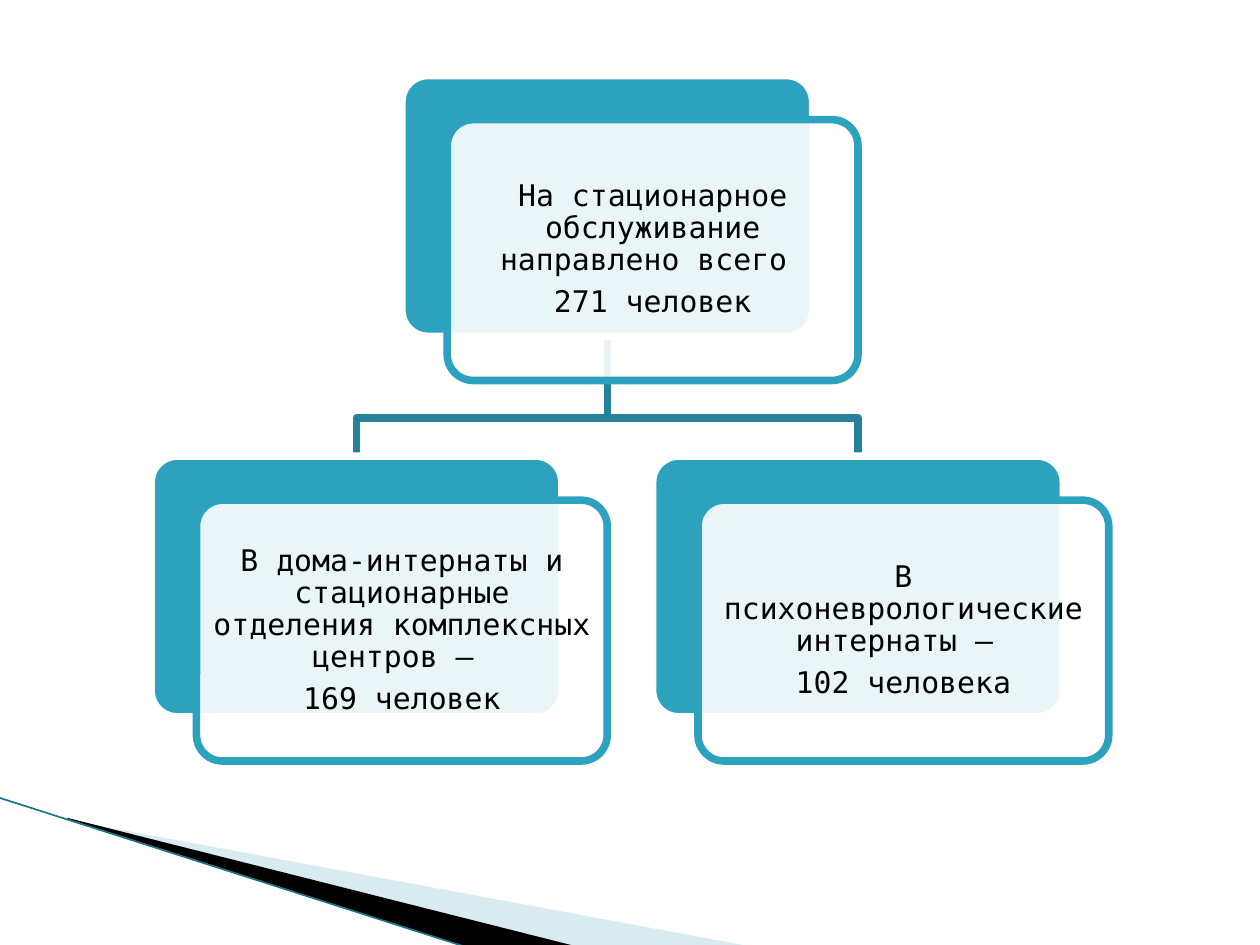
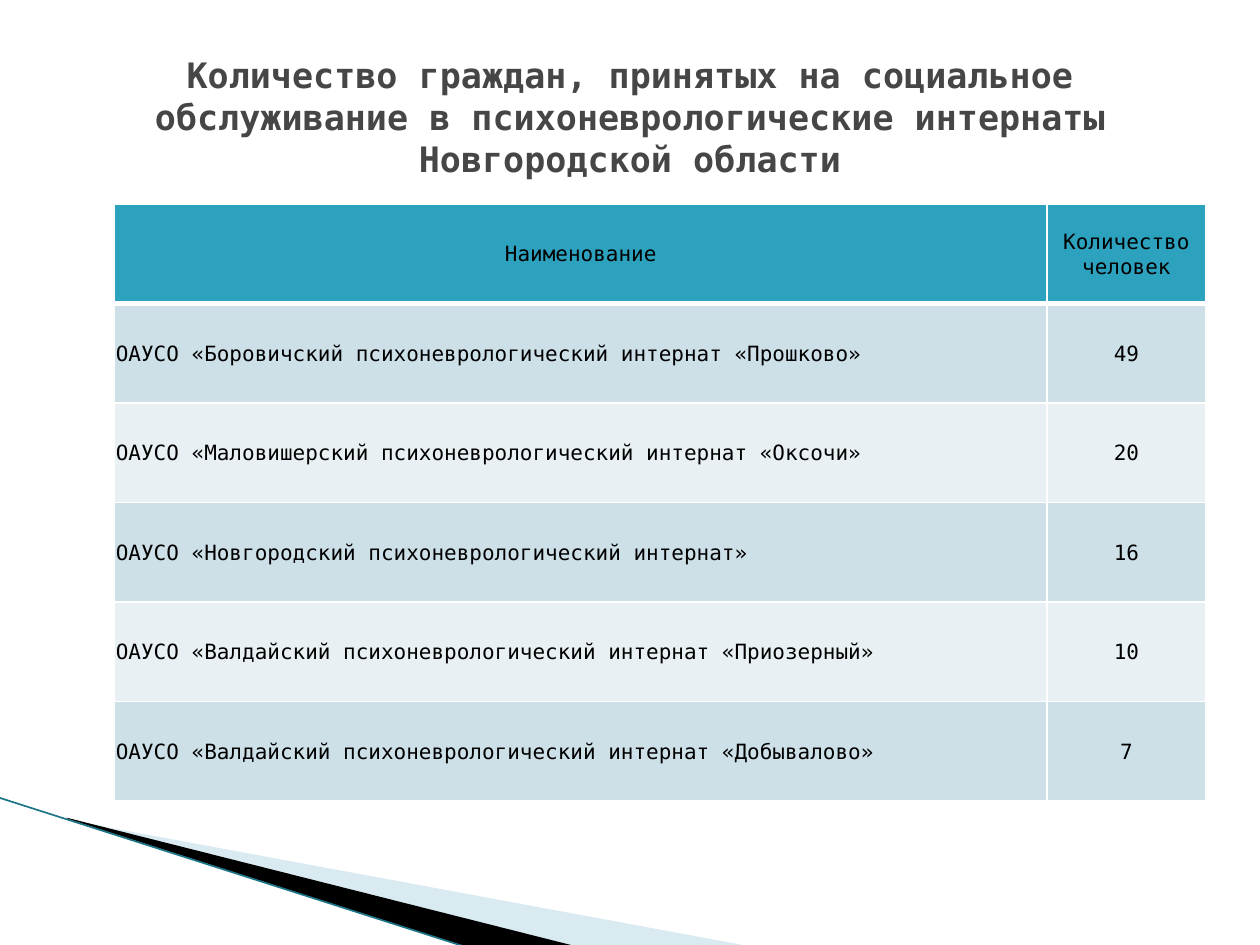
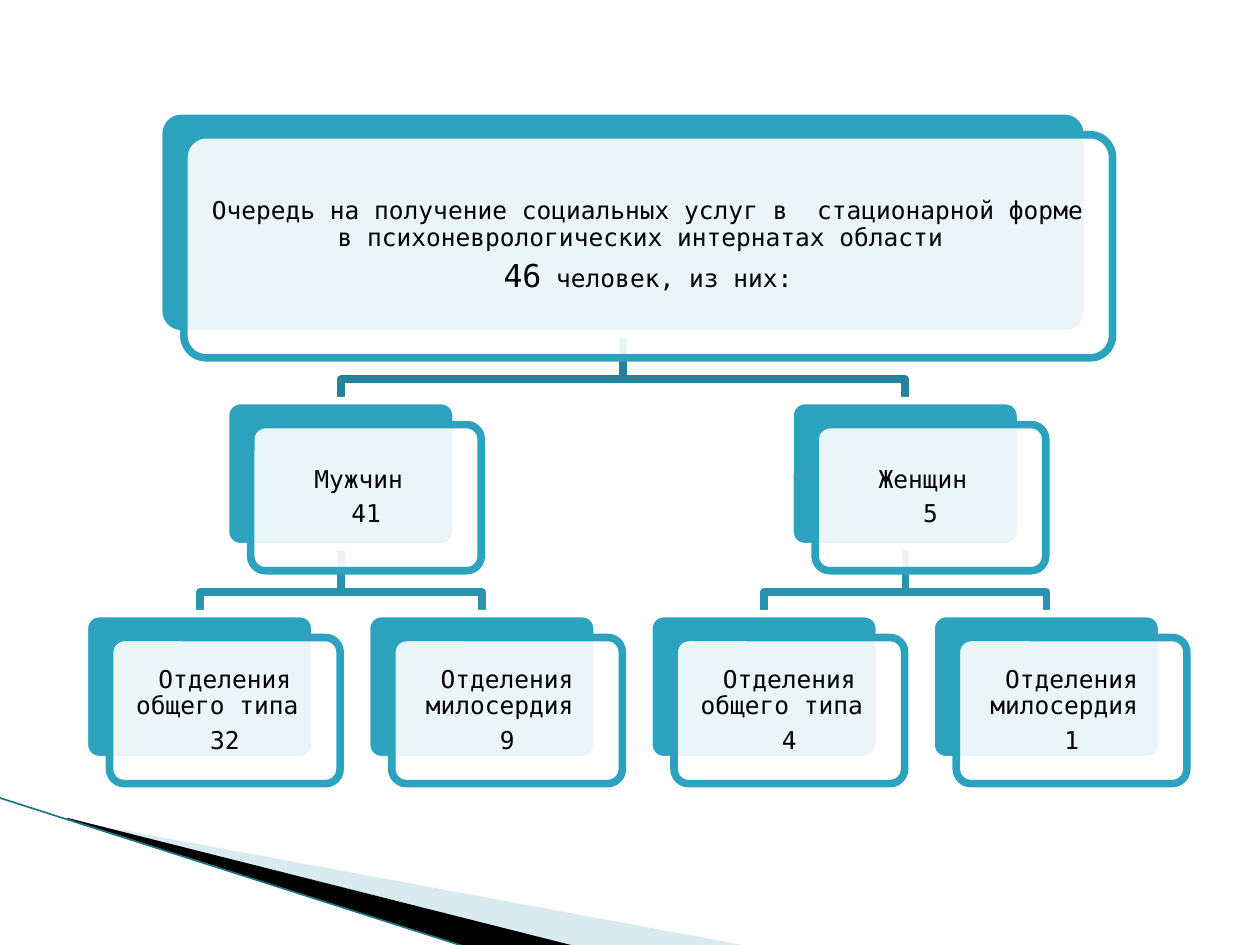
from lxml import etree
from pptx import Presentation
from pptx.dml.color import RGBColor
from pptx.enum.shapes import MSO_CONNECTOR, MSO_SHAPE
from pptx.enum.text import MSO_ANCHOR, PP_ALIGN
from pptx.oxml.ns import qn
from pptx.util import Inches, Pt

FONT = "DejaVu Sans Mono"
TEAL, WHITE, BLACK, GREY = "2DA2BF", "FFFFFF", "000000", "464646"
EDGE, PALE = "1B7587", "A0CBDC"
LINKS = ["248299", "2993AD"]  # one colour per tree level
BANDS = ["CDE0E8", "E8F0F4"]
LINE_W = 4.33

# A node is (lines of text, children); a line is a string or a list of (text, size).
SENT_TREE = (["На стационарное обслуживание направлено всего ", "271 человек"], [
    (["В дома-интернаты и стационарные отделения комплексных центров – ",
      "169 человек"], []),
    (["В психоневрологические интернаты – ", "102 человека"], []),
])
SENT_LAYOUT = dict(sizes=[(3.26, 2.07), (3.26, 2.07)], left=1.2, top=0.6, pitch=3.98,
                   gap=0.95, shift=(0.36, 0.35), font_size=17, margin=0.07)

GENERAL, MERCY = "Отделения общего типа ", "Отделения милосердия "
QUEUE_TREE = (["Очередь на получение социальных услуг в  стационарной форме "
               "в психоневрологических интернатах области ",
               [("46", 18), (" человек, из них:", 14)]], [
    (["Мужчин ", "41"], [([GENERAL, "32"], []), ([MERCY, "9"], [])]),
    (["Женщин ", "5"], [([GENERAL, "4"], []), ([MERCY, "1"], [])]),
])
QUEUE_LAYOUT = dict(sizes=[(7.37, 1.77), (1.83, 1.16), (1.83, 1.16)], left=0.67, top=0.88,
                    pitch=2.24, gap=0.53, shift=(0.2, 0.19), font_size=14, margin=0.06)

TABLE_TITLE = ("Количество граждан, принятых на социальное обслуживание "
               "в психоневрологические интернаты Новгородской области")
TABLE_ROWS = [
    ("Наименование", "Количество человек"),
    ("ОАУСО «Боровичский психоневрологический интернат «Прошково»", "49"),
    ("ОАУСО «Маловишерский психоневрологический интернат «Оксочи»", "20"),
    ("ОАУСО «Новгородский психоневрологический интернат»", "16"),
    ("ОАУСО «Валдайский психоневрологический интернат «Приозерный»", "10"),
    ("ОАУСО «Валдайский психоневрологический интернат «Добывалово»", "7"),
]
COL_WIDTHS = [7.4, 1.26]
ROW_H = 0.79


def rgb(color):
    return RGBColor.from_string(color)


def paint(sp, fill=None, line=None, opacity=100):
    """Set fill and outline; None means no fill or no outline."""
    sp.shadow.inherit = False
    if fill:
        sp.fill.solid()
        sp.fill.fore_color.rgb = rgb(fill)
        if opacity < 100:
            clr = sp.fill._xPr.find(qn("a:solidFill"))[0]
            etree.SubElement(clr, qn("a:alpha")).set("val", str(opacity * 1000))
    else:
        sp.fill.background()
    if line:
        sp.line.color.rgb = rgb(line)
        sp.line.width = Pt(LINE_W)
    else:
        sp.line.fill.background()


def add_path(s, points, close):
    pts = [(Inches(x), Inches(y)) for x, y in points]
    builder = s.shapes.build_freeform(*pts[0], scale=1.0)
    builder.add_line_segments(pts[1:], close=close)
    return builder.convert_to_shape()


def set_font(p, size, color=BLACK, bold=False):
    p.font.name, p.font.size, p.font.bold = FONT, Pt(size), bold
    p.font.color.rgb = rgb(color)


def add_text(s, box, lines, size, margins, color=BLACK, bold=False):
    tf = s.shapes.add_textbox(*map(Inches, box)).text_frame
    tf.word_wrap = True
    tf.vertical_anchor = MSO_ANCHOR.MIDDLE
    tf.margin_left = tf.margin_right = Inches(margins[0])
    tf.margin_top = tf.margin_bottom = Inches(margins[1])
    for i, line in enumerate(lines):
        p = tf.add_paragraph() if i else tf.paragraphs[0]
        p.alignment = PP_ALIGN.CENTER
        set_font(p, size, color, bold)
        for text, run_size in [(line, size)] if isinstance(line, str) else line:
            r = p.add_run()
            r.text = text
            if run_size != size:
                r.font.size = Pt(run_size)
    return tf


def add_base_slide(prs):
    """Blank slide with the wedge in the lower left corner."""
    s = prs.slides.add_slide(prs.slide_layouts[6])
    paint(add_path(s, [(0.55, 6.51), (5.95, 7.51), (4.56, 7.51), (0.55, 6.5)], True),
          PALE, opacity=40)
    paint(add_path(s, [(0.53, 6.49), (4.57, 7.51), (3.72, 7.52), (0.54, 6.5)], True), BLACK)
    edge = s.shapes.add_connector(MSO_CONNECTOR.STRAIGHT, Inches(-0.01), Inches(6.33),
                                  Inches(3.71), Inches(7.52))
    edge.line.color.rgb = rgb(EDGE)
    edge.line.width = Pt(0.95)
    etree.SubElement(edge._element.spPr, qn("a:effectLst"))
    return s


def place_tree(tree, sizes, left, top, pitch, gap):
    """Return boxes and links: leaves at an equal pitch, parents centred over children."""
    boxes, links = [], []
    next_leaf = left + sizes[-1][0] / 2

    def place(node, level, y):
        nonlocal next_leaf
        lines, children = node
        w, h = sizes[level]
        slot = len(boxes)
        boxes.append(None)
        bottom, child_y = y + h, y + h + gap
        centers = [place(child, level + 1, child_y) for child in children]
        if centers:
            cx = sum(centers) / len(centers)
        else:
            cx = next_leaf
            next_leaf += pitch
        bend = bottom + 0.68 * gap
        for x in centers:
            links.append((level, [(cx, bottom), (cx, bend), (x, bend), (x, child_y)]))
        boxes[slot] = ((cx - w / 2, y, w, h), lines)
        return cx

    place(tree, 0, top)
    return boxes, links


def add_card(s, box, **style):
    sp = s.shapes.add_shape(MSO_SHAPE.ROUNDED_RECTANGLE, *map(Inches, box))
    sp.adjustments[0] = 0.1
    paint(sp, **style)


def add_tree_slide(prs, tree, shift, font_size, margin, **layout):
    s = add_base_slide(prs)
    boxes, links = place_tree(tree, **layout)
    for level, points in links:
        paint(add_path(s, points, False), line=LINKS[level])
    for (x, y, w, h), lines in boxes:
        add_card(s, (x, y, w, h), fill=TEAL, line=WHITE)
        x, y = x + shift[0], y + shift[1]
        add_card(s, (x, y, w, h), fill=WHITE, line=TEAL, opacity=90)
        inset = 0.03 * h
        tf = add_text(s, (x + inset, y + inset, w - 2 * inset, h - 2 * inset),
                      lines, font_size, (margin, margin))
        for p in tf.paragraphs:
            p.line_spacing = 0.9
            p.space_after = Pt(round(0.33 * font_size, 1))


def set_borders(cell, bottom):
    tc_pr = cell._tc.get_or_add_tcPr()
    for i, (side, width) in enumerate([("L", 1), ("R", 1), ("T", 1), ("B", bottom)]):
        ln = etree.Element(qn(f"a:ln{side}"), w=str(Pt(width)))
        fill = etree.SubElement(ln, qn("a:solidFill"))
        etree.SubElement(fill, qn("a:srgbClr"), val=WHITE)
        tc_pr.insert(i, ln)


def add_table_slide(prs):
    s = add_base_slide(prs)
    add_text(s, (0.5, 0.3, 9, 1.25), [TABLE_TITLE], 20, (0.1, 0.05), GREY, True)
    table = s.shapes.add_table(len(TABLE_ROWS), len(COL_WIDTHS), Inches(0.91), Inches(1.62),
                               Inches(sum(COL_WIDTHS)),
                               Inches(ROW_H * len(TABLE_ROWS))).table
    for col, width in zip(table.columns, COL_WIDTHS):
        col.width = Inches(width)
    for i, row in enumerate(TABLE_ROWS):
        table.rows[i].height = Inches(ROW_H)
        for j, text in enumerate(row):
            cell = table.cell(i, j)
            cell.text = text
            cell.vertical_anchor = MSO_ANCHOR.MIDDLE
            cell.margin_left = cell.margin_right = cell.margin_top = Inches(0.01)
            cell.margin_bottom = 0
            cell.fill.solid()
            cell.fill.fore_color.rgb = rgb(BANDS[(i - 1) % 2] if i else TEAL)
            set_borders(cell, 1 if i else 3)
            p = cell.text_frame.paragraphs[0]
            p.alignment = PP_ALIGN.LEFT if i and not j else PP_ALIGN.CENTER
            set_font(p, 12)


def main():
    prs = Presentation()
    prs.slide_width, prs.slide_height = Inches(10), Inches(7.5)
    add_tree_slide(prs, SENT_TREE, **SENT_LAYOUT)
    add_table_slide(prs)
    add_tree_slide(prs, QUEUE_TREE, **QUEUE_LAYOUT)
    prs.save("out.pptx")


if __name__ == "__main__":
    main()
